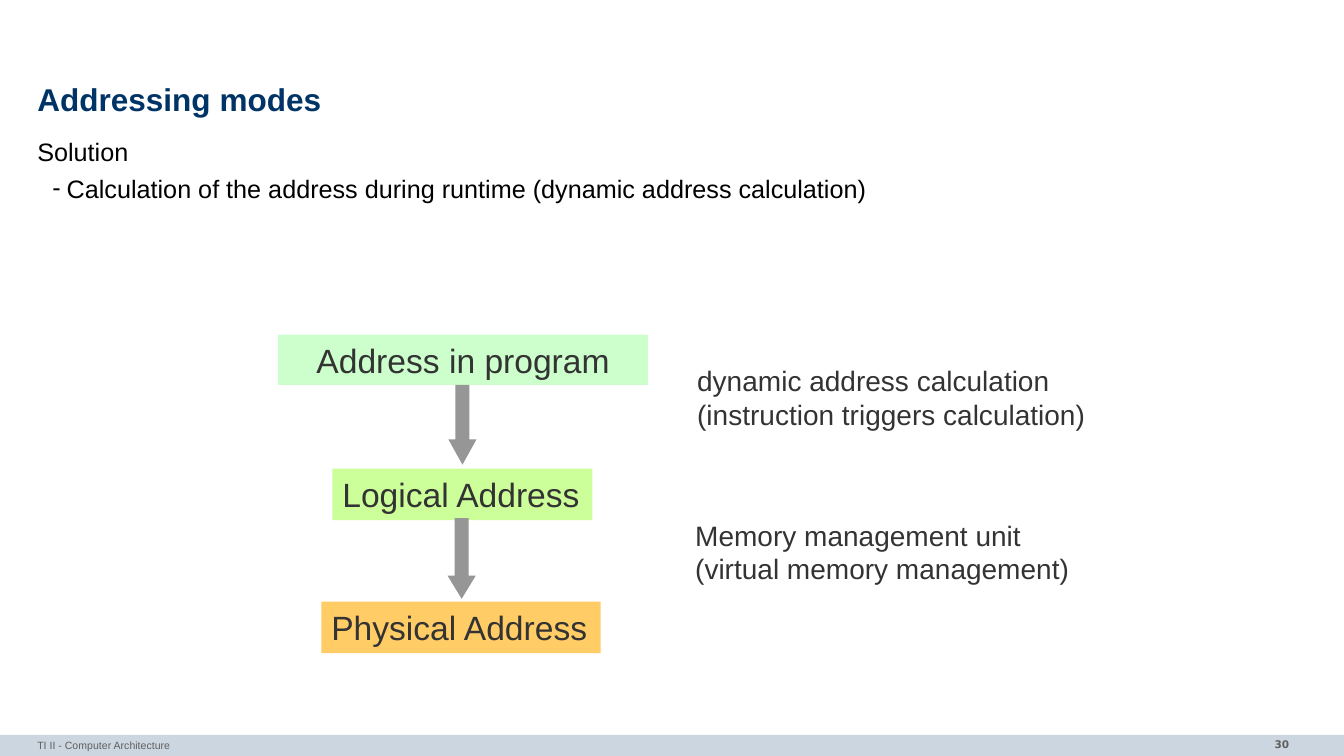
from dataclasses import dataclass

from lxml.etree import SubElement
from pptx import Presentation
from pptx.dml.color import RGBColor
from pptx.enum.shapes import MSO_SHAPE
from pptx.enum.text import MSO_ANCHOR, MSO_AUTO_SIZE, PP_ALIGN
from pptx.oxml.ns import qn
from pptx.util import Cm, Pt

# Content; boxes are left, top, width, height in centimetres
TITLE = "Addressing modes"
BODY = [
    ("Solution", 0),
    ("Calculation of the address during runtime (dynamic address calculation)", 1),
]
FOOTER = "TI II - Computer Architecture"
PAGE_NUMBER = "30"
ADDRESSES = [  # text, box, fill, alignment, wrap
    ("Address in program", (7.01, 8.43, 9.32, 1.27), "CCFFCC", PP_ALIGN.CENTER, True),
    ("Logical Address", (8.38, 11.81, 6.55, 1.3), "CCFF99", PP_ALIGN.LEFT, False),
    ("Physical Address", (8.1, 15.16, 7.04, 1.3), "FFCC66", PP_ALIGN.LEFT, False),
]
ARROWS = [  # box, share of the length taken by the head relative to the width
    ((11.3, 9.7, 0.71, 2.01), 0.9),
    ((11.28, 13.06, 0.71, 2.03), 0.82),
]
NOTES = [
    ("dynamic address calculation \v(instruction triggers calculation)",
     (17.32, 9.04, 10.36, 1.96)),
    ("Memory management unit \v(virtual memory management)",
     (17.27, 12.93, 10.01, 1.96)),
]


@dataclass(frozen=True)
class Theme:
    font: str = "Arial"
    number_font: str = "DejaVu Sans"
    title: str = "003366"
    body: str = "000000"
    diagram: str = "333333"
    footer: str = "5F5F5F"
    arrow: str = "969696"
    bar: str = "CCD6E0"
    title_size: float = 22.5
    body_size: float = 18
    address_size: float = 24
    note_size: float = 20
    footer_size: float = 7.5


THEME = Theme()
WIDTH, HEIGHT = 33.87, 19.05
MARGIN, CONTENT_WIDTH = 0.94, 32
BAR_HEIGHT = 0.53


def place(shape, box):
    shape.left, shape.top, shape.width, shape.height = map(Cm, box)


def set_margins(text_frame, horizontal, vertical):
    text_frame.margin_left = text_frame.margin_right = Cm(horizontal)
    text_frame.margin_top = text_frame.margin_bottom = Cm(vertical)


def format_runs(text_frame, size, color, font=THEME.font, bold=False):
    for paragraph in text_frame.paragraphs:
        for run in paragraph.runs:
            run.font.name, run.font.size, run.font.bold = font, Pt(size), bold
            run.font.color.rgb = RGBColor.from_string(color)


def add_filled(slide, kind, box, color):
    shape = slide.shapes.add_shape(kind, *map(Cm, box))
    shape.shadow.inherit = False
    shape.fill.solid()
    shape.fill.fore_color.rgb = RGBColor.from_string(color)
    shape.line.fill.background()
    return shape


def add_text(slide, text, box, wrap=True):
    text_frame = slide.shapes.add_textbox(*map(Cm, box)).text_frame
    text_frame.text = text
    text_frame.word_wrap = wrap
    return text_frame


def set_bullet(paragraph, level):
    paragraph.level = level
    properties = paragraph._p.get_or_add_pPr()
    properties.set("marL", str(Cm(0.74 * level)))
    properties.set("indent", str(Cm(-0.36 * level)))
    if level:
        SubElement(properties, qn("a:buFont"), typeface=THEME.font)
        SubElement(properties, qn("a:buChar"), char="-")
    else:
        SubElement(properties, qn("a:buNone"))


def add_footer(slide):
    add_filled(slide, MSO_SHAPE.RECTANGLE,
               (0, HEIGHT - BAR_HEIGHT, WIDTH, BAR_HEIGHT), THEME.bar)
    number = add_text(slide, PAGE_NUMBER, (28.19, 18.47, 4.55, 0.66))
    number.paragraphs[0].alignment = PP_ALIGN.RIGHT
    format_runs(number, THEME.footer_size, THEME.footer, THEME.number_font, True)
    footer = add_text(slide, FOOTER, (MARGIN, 18.49, 22.15, 0.64))
    set_margins(footer, 0, 0.13)
    format_runs(footer, THEME.footer_size, THEME.footer)


def fill_placeholders(slide):
    title, body = slide.shapes.title, slide.placeholders[1]
    place(title, (MARGIN, 1.98, CONTENT_WIDTH, 1.19))
    place(body, (MARGIN, 3.43, CONTENT_WIDTH, 14.58))
    title.text_frame.text = TITLE
    body.text_frame.text = "\n".join(text for text, level in BODY)
    for shape in (title, body):
        set_margins(shape.text_frame, 0, 0)
        shape.text_frame.auto_size = MSO_AUTO_SIZE.NONE
        shape.text_frame.word_wrap = True

    title.text_frame.vertical_anchor = MSO_ANCHOR.MIDDLE
    heading = title.text_frame.paragraphs[0]
    heading.alignment, heading.line_spacing = PP_ALIGN.LEFT, 0.85
    format_runs(title.text_frame, THEME.title_size, THEME.title, bold=True)

    body.text_frame.vertical_anchor = MSO_ANCHOR.TOP
    for index, (paragraph, (text, level)) in enumerate(
            zip(body.text_frame.paragraphs, BODY)):
        set_bullet(paragraph, level)
        paragraph.line_spacing = 1.02
        paragraph.space_before = Pt(3.8 if index else 0)
    format_runs(body.text_frame, THEME.body_size, THEME.body)


def add_diagram(slide):
    # Address boxes
    for text, box, color, alignment, wrap in ADDRESSES:
        shape = add_filled(slide, MSO_SHAPE.RECTANGLE, box, color)
        text_frame = shape.text_frame
        text_frame.text = text
        text_frame.word_wrap = wrap
        text_frame.vertical_anchor = MSO_ANCHOR.TOP
        text_frame.paragraphs[0].alignment = alignment
        format_runs(text_frame, THEME.address_size, THEME.diagram)
    # Arrows between the boxes
    for box, head in ARROWS:
        arrow = add_filled(slide, MSO_SHAPE.DOWN_ARROW, box, THEME.arrow)
        arrow.adjustments[0], arrow.adjustments[1] = 0.5, head
    # Explanations beside the arrows
    for text, box in NOTES:
        text_frame = add_text(slide, text, box, wrap=False)
        format_runs(text_frame, THEME.note_size, THEME.diagram)


def main():
    presentation = Presentation()
    presentation.slide_width, presentation.slide_height = Cm(WIDTH), Cm(HEIGHT)
    slide = presentation.slides.add_slide(presentation.slide_layouts[1])
    add_footer(slide)
    fill_placeholders(slide)
    add_diagram(slide)
    presentation.save("out.pptx")


if __name__ == "__main__":
    main()
